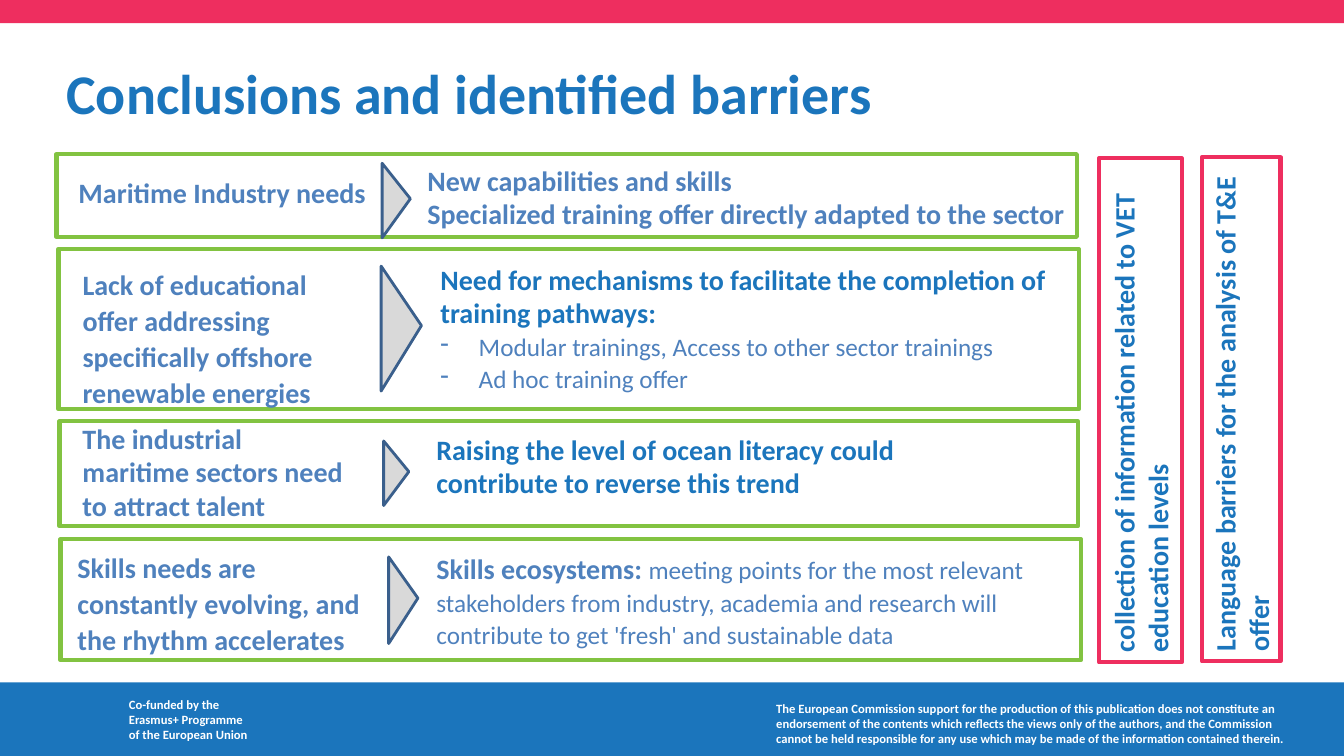
from lxml import etree
from pptx import Presentation
from pptx.dml.color import RGBColor
from pptx.enum import shapes, text
from pptx.oxml import ns
from pptx.util import Inches, Pt

PINK = RGBColor(0xEE, 0x2E, 0x5F)
BLUE = RGBColor(0x1B, 0x75, 0xBC)
SOFT_BLUE = RGBColor(0x4F, 0x81, 0xBD)
GREEN = RGBColor(0x82, 0xC3, 0x41)
GREY = RGBColor(0xD9, 0xD9, 0xD9)
NAVY = RGBColor(0x3A, 0x5F, 0x8C)
WHITE = RGBColor(0xFF, 0xFF, 0xFF)
RECTANGLE = shapes.MSO_SHAPE.RECTANGLE
TRIANGLE = shapes.MSO_SHAPE.ISOSCELES_TRIANGLE

# Each row: frame, arrow (both before rotation), barrier box and text, line spacing
ROWS = [
    ((0.56, 1.53, 10.12, 0.82), (3.56, 1.85, 0.74, 0.28),
     (0.68, 1.67, 3.3, 0.46), "Maritime Industry needs", 1.07),
    ((0.58, 2.47, 10.12, 1.59), (3.36, 3.06, 1.24, 0.4),
     (0.72, 2.58, 2.89, 1.54),
     "Lack of educational offer addressing specifically offshore renewable energies", 1.07),
    ((0.59, 4.18, 10.1, 1.04), (3.61, 4.57, 0.64, 0.25),
     (0.72, 4.13, 2.87, 1.11),
     "The industrial maritime sectors need to attract talent", 1.0),
    ((0.6, 5.35, 10.12, 1.2), (3.57, 5.81, 0.86, 0.29),
     (0.67, 5.39, 3.07, 1.18),
     "Skills needs are constantly evolving, and the rhythm accelerates", 1.07),
]

CROSS_BARRIERS = [
    ((8.81, 3.66, 5, 0.82), "collection of information related to VET education levels"),
    ((9.81, 3.67, 5, 0.78), "Language barriers for the analysis of T&E offer"),
]


def add_figure(page, kind, at, fill=None, line=None, width=3, rotation=0):
    figure = page.shapes.add_shape(kind, *map(Inches, at))
    figure.shadow.inherit = False
    figure.rotation = rotation
    if fill is None:
        figure.fill.background()
    else:
        figure.fill.solid()
        figure.fill.fore_color.rgb = fill
    if line is None:
        figure.line.fill.background()
    else:
        figure.line.color.rgb = line
        figure.line.width = Pt(width)
    return figure


def style(font, size, color, bold=True):
    font.name = "Calibri"
    font.size = Pt(size)
    font.bold = bold
    font.color.rgb = color


def add_text(page, at, lines, size=20, color=SOFT_BLUE, spacing=1.0):
    box = page.shapes.add_textbox(*map(Inches, at))
    frame = box.text_frame
    frame.word_wrap = True
    for index, line in enumerate(lines):
        para = frame.paragraphs[0] if index == 0 else frame.add_paragraph()
        para.text = line
        para.line_spacing = spacing
        style(para.font, size, color)
    return frame


def add_dash_item(frame, line):
    para = frame.add_paragraph()
    para.text = line
    para.alignment = text.PP_ALIGN.JUSTIFY
    para.line_spacing = 1.07
    properties = para._p.get_or_add_pPr()
    properties.set("marL", str(Inches(0.38)))
    properties.set("indent", str(-Inches(0.38)))
    etree.SubElement(properties, ns.qn("a:buChar")).set("char", "-")
    style(para.font, 18, SOFT_BLUE, bold=False)


def add_row(page, frame_at, arrow_at, barrier_at, barrier, spacing):
    add_figure(page, RECTANGLE, frame_at, line=GREEN)
    arrow = add_figure(page, TRIANGLE, arrow_at, GREY, NAVY, 2, rotation=90)
    arrow.adjustments[0] = 0.476
    add_text(page, barrier_at, [barrier], spacing=spacing)


def add_cross_barrier(page, at, label):
    figure = add_figure(page, RECTANGLE, at, line=PINK, rotation=270)
    frame = figure.text_frame
    frame.word_wrap = True
    frame.vertical_anchor = text.MSO_ANCHOR.MIDDLE
    para = frame.paragraphs[0]
    para.text = label
    para.alignment = text.PP_ALIGN.LEFT
    style(para.font, 20, BLUE)


def add_responses(page):
    add_text(page, (4.14, 1.57, 7.81, 0.77), [
        "New capabilities and skills",
        "Specialized training offer directly adapted to the sector"])

    pathways = add_text(page, (4.27, 2.55, 6.67, 1.42), [
        "Need for mechanisms to facilitate the completion of training pathways:"], color=BLUE)
    for item in ("Modular trainings, Access to other sector trainings", "Ad hoc training offer"):
        add_dash_item(pathways, item)

    add_text(page, (4.23, 4.24, 5.76, 0.77), [
        "Raising the level of ocean literacy could contribute to reverse this trend"], color=BLUE)

    ecosystems = add_text(page, (4.23, 5.4, 6.45, 1.11), ["Skills ecosystems: "], spacing=1.07)
    span = ecosystems.paragraphs[0].add_run()
    span.text = ("meeting points for the most relevant stakeholders from industry, academia "
                 "and research will contribute to get 'fresh' and sustainable data")
    style(span.font, 18, SOFT_BLUE, bold=False)


def add_footer(page):
    add_figure(page, RECTANGLE, (0, 6.77, 13.33, 0.73), BLUE)
    add_text(page, (1.18, 6.86, 5.45, 0.6), [
        "Co-funded by the", "Erasmus+ Programme", "of the European Union"], 9, WHITE)
    add_text(page, (7.6, 6.9, 5.45, 0.6), [
        "The European Commission support for the production of this publication does not "
        "constitute an endorsement of the contents which reflects the views only of the "
        "authors, and the Commission cannot be held responsible for any use which may be "
        "made of the information contained therein."], 9, WHITE)


def main():
    deck = Presentation()
    deck.slide_width, deck.slide_height = Inches(13.33), Inches(7.5)
    page = deck.slides.add_slide(deck.slide_layouts[6])

    # Top band, footer and title
    add_figure(page, RECTANGLE, (0, 0, 13.33, 0.23), PINK)
    add_footer(page)
    add_text(page, (0.56, 0.53, 9.67, 0.63), ["Conclusions and identified barriers"], 40, BLUE)

    # Barriers with their responses
    for row in ROWS:
        add_row(page, *row)
    add_responses(page)

    # Barriers that cut across all rows
    for at, label in CROSS_BARRIERS:
        add_cross_barrier(page, at, label)

    deck.save("out.pptx")


if __name__ == "__main__":
    main()
